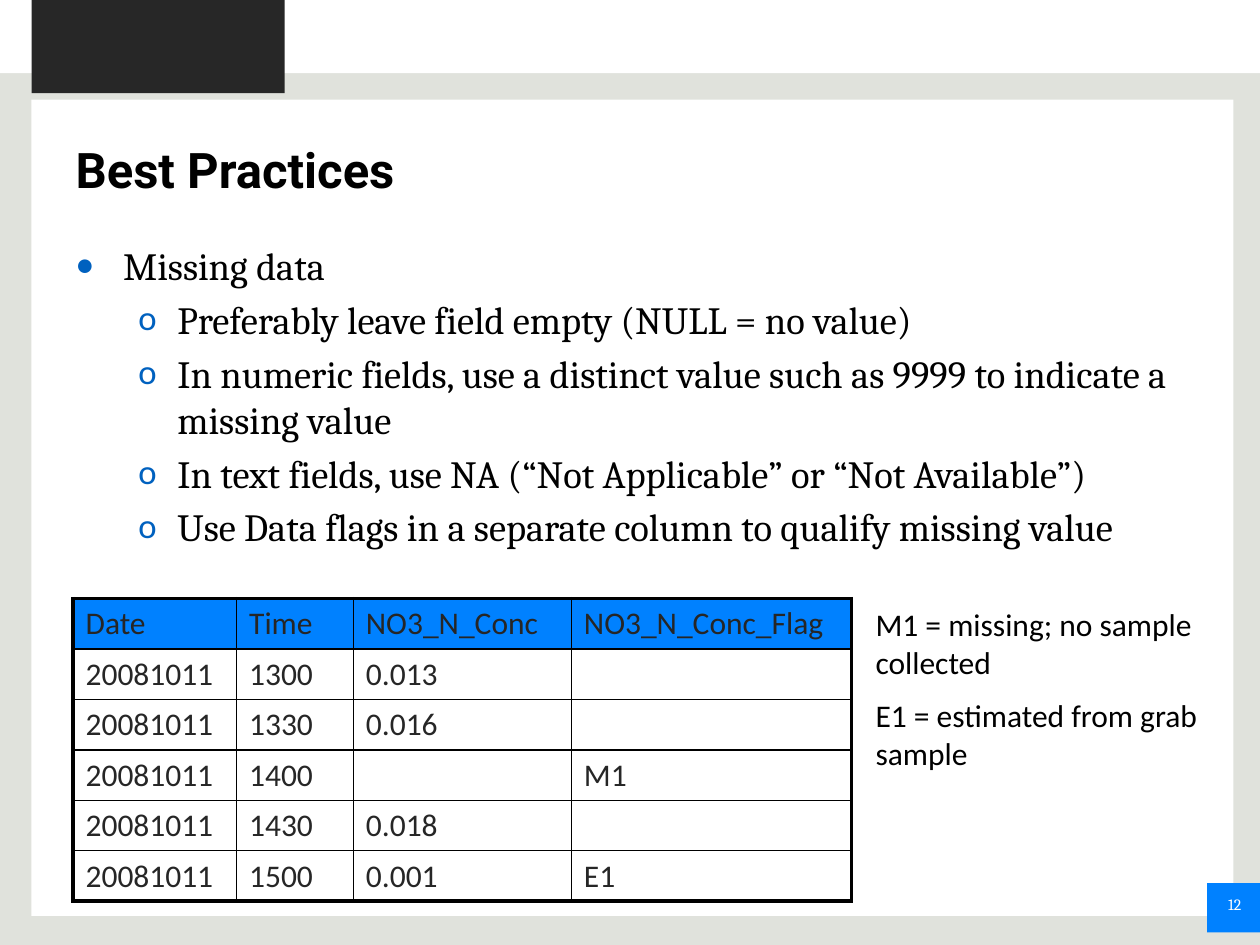
from dataclasses import dataclass

from lxml.etree import SubElement
from pptx import Presentation
from pptx.dml.color import RGBColor
from pptx.enum.shapes import MSO_SHAPE
from pptx.enum.text import MSO_ANCHOR, PP_ALIGN
from pptx.oxml.ns import qn
from pptx.util import Inches, Pt


@dataclass(frozen=True)
class Theme:
    backdrop: str = "E0E2DC"
    white: str = "FFFFFF"
    black: str = "000000"
    dark: str = "272727"
    cell_text: str = "262626"
    accent: str = "0081FF"
    bullet: str = "0061BF"
    heading: str = "Roboto"
    serif: str = "Cambria"
    sans: str = "Calibri"
    title_size: int = 28
    body_size: int = 22
    small_size: int = 18
    number_size: int = 9
    thin: float = 1
    thick: float = 2.25


T = Theme()

BULLETS = [
    (0, "Missing data"),
    (1, "Preferably leave field empty (NULL = no value)"),
    (1, "In numeric fields, use a distinct value such as 9999 to indicate a missing value"),
    (1, "In text fields, use NA (“Not Applicable” or “Not Available”)"),
    (1, "Use Data flags in a separate column to qualify missing value"),
]
BULLET_STYLES = [("•", 0.38, 0.38, 100), ("o", 0.81, 0.31, 90)]
ROWS = [
    ("Date", "Time", "NO3_N_Conc", "NO3_N_Conc_Flag"),
    ("20081011", "1300", "0.013", ""),
    ("20081011", "1330", "0.016", ""),
    ("20081011", "1400", "", "M1"),
    ("20081011", "1430", "0.018", ""),
    ("20081011", "1500", "0.001", "E1"),
]
COL_SHARES = [0.21, 0.15, 0.28, 0.36]
FLAG_NOTES = ["M1 = missing; no sample collected", "E1 = estimated from grab sample"]


def add_run(p, text, font, size, color, bold=False):
    r = p.add_run()
    r.text = text
    r.font.name = font
    r.font.size = Pt(size)
    r.font.bold = bold
    r.font.color.rgb = RGBColor.from_string(color)


def add_paragraph(tf, index):
    return tf.add_paragraph() if index else tf.paragraphs[0]


def add_text_box(s, left, top, width, height):
    tf = s.shapes.add_textbox(left, top, width, height).text_frame
    tf.word_wrap = True
    return tf


def add_block(s, left, top, width, height, color):
    sp = s.shapes.add_shape(MSO_SHAPE.RECTANGLE, left, top, width, height)
    sp.shadow.inherit = False
    sp.fill.solid()
    sp.fill.fore_color.rgb = RGBColor.from_string(color)
    sp.line.fill.background()


def add_frame(s, left, top, width, height):
    add_block(s, left, top, width, Inches(0.58), T.white)
    add_block(s, left + Inches(0.25), top + Inches(0.79),
              width - Inches(0.46), height - Inches(1.02), T.white)
    add_block(s, left + Inches(0.25), top, Inches(2.01), Inches(0.74), T.dark)


def add_page_number(s, left, top, width, height, number):
    add_block(s, left, top, width, height, T.accent)
    tf = add_text_box(s, left - Inches(0.2), top + Inches(0.07), Inches(0.57), Inches(0.2))
    tf.vertical_anchor = MSO_ANCHOR.MIDDLE
    p = tf.paragraphs[0]
    p.alignment = PP_ALIGN.RIGHT
    add_run(p, number, T.serif, T.number_size, T.white)


def place_title(s, left, top, width, height, text):
    title = s.shapes.title
    title.left, title.top, title.width, title.height = left, top, width, height
    tf = title.text_frame
    tf.vertical_anchor = MSO_ANCHOR.TOP
    p = tf.paragraphs[0]
    p.alignment = PP_ALIGN.LEFT
    add_run(p, text, T.heading, T.title_size, T.black, bold=True)
    title.element.getparent().append(title.element)


def set_bullet(p, char, margin, hanging, percent):
    pPr = p._p.get_or_add_pPr()
    pPr.set("marL", str(Inches(margin)))
    pPr.set("indent", str(-Inches(hanging)))
    color = SubElement(pPr, qn("a:buClr"))
    SubElement(color, qn("a:srgbClr"), val=T.bullet)
    SubElement(pPr, qn("a:buSzPct"), val=str(percent * 1000))
    SubElement(pPr, qn("a:buFont"), typeface=T.sans)
    SubElement(pPr, qn("a:buChar"), char=char)


def add_bullets(s, left, top, width, height, items):
    tf = add_text_box(s, left, top, width, height)
    for i, (level, text) in enumerate(items):
        p = add_paragraph(tf, i)
        p.level = level
        set_bullet(p, *BULLET_STYLES[level])
        p.space_before = Pt(0.2 * T.body_size if i else 0)
        add_run(p, text, T.serif, T.body_size, T.black)


def set_borders(cell, outer_sides):
    tcPr = cell._tc.get_or_add_tcPr()
    for side in "LRTB":
        width = T.thick if side in outer_sides else T.thin
        ln = SubElement(tcPr, qn(f"a:ln{side}"), w=str(Pt(width)))
        fill = SubElement(ln, qn("a:solidFill"))
        SubElement(fill, qn("a:srgbClr"), val=T.black)


def add_data_table(s, left, top, width, height, rows):
    last_row, last_col = len(rows) - 1, len(rows[0]) - 1
    table = s.shapes.add_table(len(rows), len(rows[0]), left, top, width, height).table
    table.horz_banding = False
    for column, share in zip(table.columns, COL_SHARES):
        column.width = int(width * share)
    for i, row in enumerate(rows):
        for j, text in enumerate(row):
            cell = table.cell(i, j)
            edges = {"L": j == 0, "R": j == last_col, "T": i == 0, "B": i == last_row}
            set_borders(cell, [side for side, outer in edges.items() if outer])
            if i == 0:
                cell.fill.solid()
                cell.fill.fore_color.rgb = RGBColor.from_string(T.accent)
            else:
                cell.fill.background()
            if text:
                add_run(cell.text_frame.paragraphs[0], text, T.sans, T.small_size, T.cell_text)


def add_flag_notes(s, left, top, width, height, notes):
    tf = add_text_box(s, left, top, width, height)
    for i, text in enumerate(notes):
        p = add_paragraph(tf, i)
        p.space_before = Pt(0.5 * T.small_size if i else 0)
        add_run(p, text, T.sans, T.small_size, T.black)


def main():
    prs = Presentation()
    prs.slide_width, prs.slide_height = Inches(10), Inches(7.5)
    s = prs.slides.add_slide(prs.slide_layouts[5])
    s.background.fill.solid()
    s.background.fill.fore_color.rgb = RGBColor.from_string(T.backdrop)
    add_frame(s, 0, 0, prs.slide_width, prs.slide_height)
    add_page_number(s, Inches(9.58), Inches(7.01), Inches(0.42), Inches(0.39), "12")
    place_title(s, Inches(0.5), Inches(1.06), Inches(9), Inches(0.62), "Best Practices")
    add_bullets(s, Inches(0.5), Inches(1.87), Inches(9), Inches(2.7), BULLETS)
    add_data_table(s, Inches(0.58), Inches(4.75), Inches(6.18), Inches(2.4), ROWS)
    add_flag_notes(s, Inches(6.85), Inches(4.75), Inches(2.99), Inches(1.45), FLAG_NOTES)
    prs.save("out.pptx")


if __name__ == "__main__":
    main()
